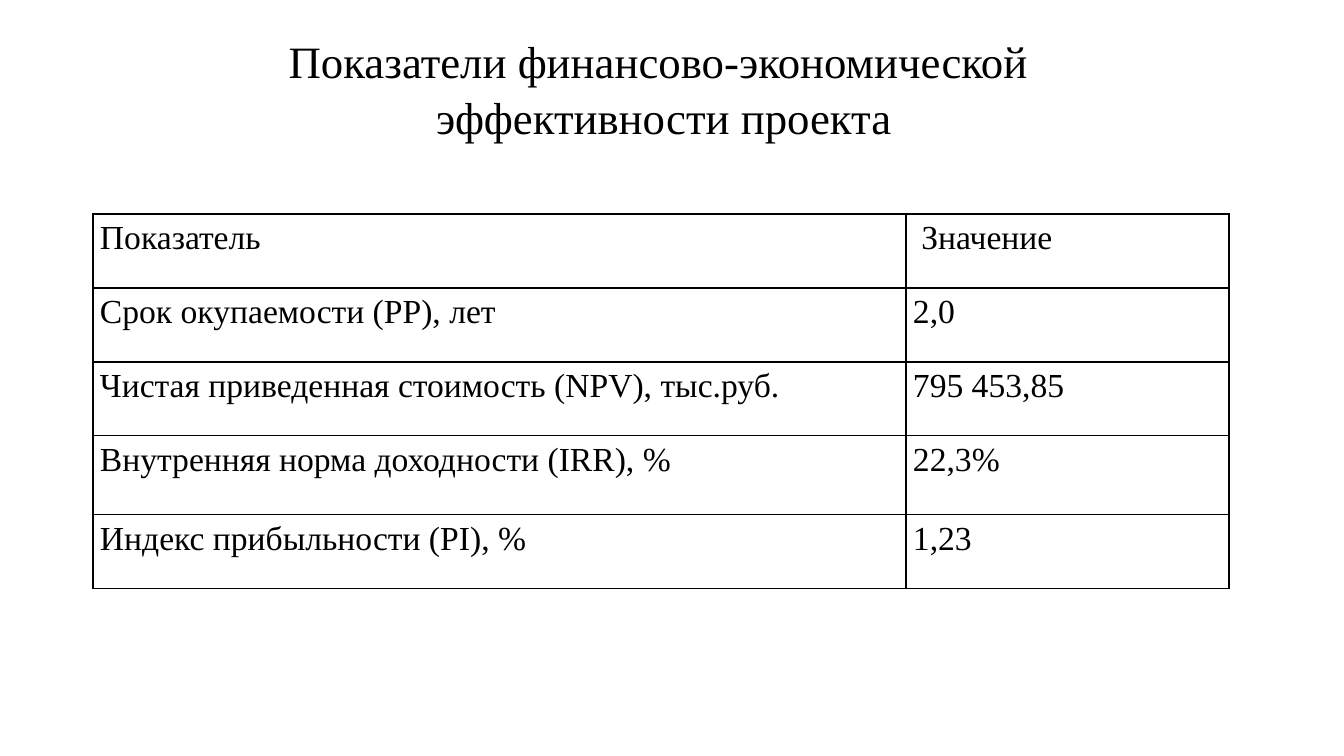
from dataclasses import dataclass

from lxml.etree import SubElement
from pptx import Presentation
from pptx.dml.color import RGBColor
from pptx.enum.text import MSO_ANCHOR, PP_ALIGN
from pptx.oxml.ns import qn
from pptx.util import Pt


@dataclass(frozen=True)
class Theme:
    font: str = "Times New Roman"
    ink: str = "000000"
    title_size: int = 32
    table_size: int = 24
    border: int = 1


THEME = Theme()
EMU_PER_INCH, PX_PER_INCH = 914400, 100.8


def px(length):
    return round(length * EMU_PER_INCH / PX_PER_INCH)


def style_text(paragraph, size, **layout):
    for name, value in layout.items():
        setattr(paragraph, name, value)
    for run in paragraph.runs:
        for name, value in {"name": THEME.font, "size": Pt(size), "bold": False}.items():
            setattr(run.font, name, value)
        run.font.color.rgb = RGBColor.from_string(THEME.ink)


deck = Presentation()
deck.slide_width, deck.slide_height = px(1344), px(756)
slide = deck.slides.add_slide(deck.slide_layouts[5])

# Title
heading = slide.shapes.title
for side, length in {"left": 59, "top": 61, "width": 1210, "height": 126}.items():
    setattr(heading, side, px(length))
heading.text_frame.text = "Показатели финансово-экономической \vэффективности проекта\v"
heading.text_frame.vertical_anchor = MSO_ANCHOR.MIDDLE
style_text(heading.text_frame.paragraphs[0], THEME.title_size,
           alignment=PP_ALIGN.CENTER, line_spacing=1.05)

# Indicators and their values
indicators = [
    ("Показатель", " Значение"),
    ("Срок окупаемости (PP), лет", "2,0"),
    ("Чистая приведенная стоимость (NPV), тыс.руб.", "795 453,85"),
    ("Внутренняя норма доходности (IRR), %", "22,3%"),
    ("Индекс прибыльности (PI), %", "1,23"),
]
column_widths = [813, 323]
row_heights = [74, 74, 74, 79, 74]

# Table
table = slide.shapes.add_table(
    len(indicators), len(column_widths), px(93), px(214),
    px(sum(column_widths)), px(sum(row_heights))).table
table.first_row = table.horz_banding = False
for column, width in zip(table.columns, column_widths):
    column.width = px(width)

cell_format = {"margin_left": px(7), "margin_right": px(7), "margin_top": 0,
               "margin_bottom": 0, "vertical_anchor": MSO_ANCHOR.TOP}
for row, height, texts in zip(table.rows, row_heights, indicators):
    row.height = px(height)
    for cell, text in zip(row.cells, texts):
        cell.text = text
        style_text(cell.text_frame.paragraphs[0], THEME.table_size, line_spacing=1.15)
        for name, value in cell_format.items():
            setattr(cell, name, value)

        # Borders precede the fill in the cell properties
        properties = cell._tc.get_or_add_tcPr()
        for edge in ("a:lnL", "a:lnR", "a:lnT", "a:lnB"):
            border = SubElement(properties, qn(edge), w=str(Pt(THEME.border)))
            fill = SubElement(border, qn("a:solidFill"))
            SubElement(fill, qn("a:srgbClr"), val=THEME.ink)
        cell.fill.background()

deck.save("out.pptx")
